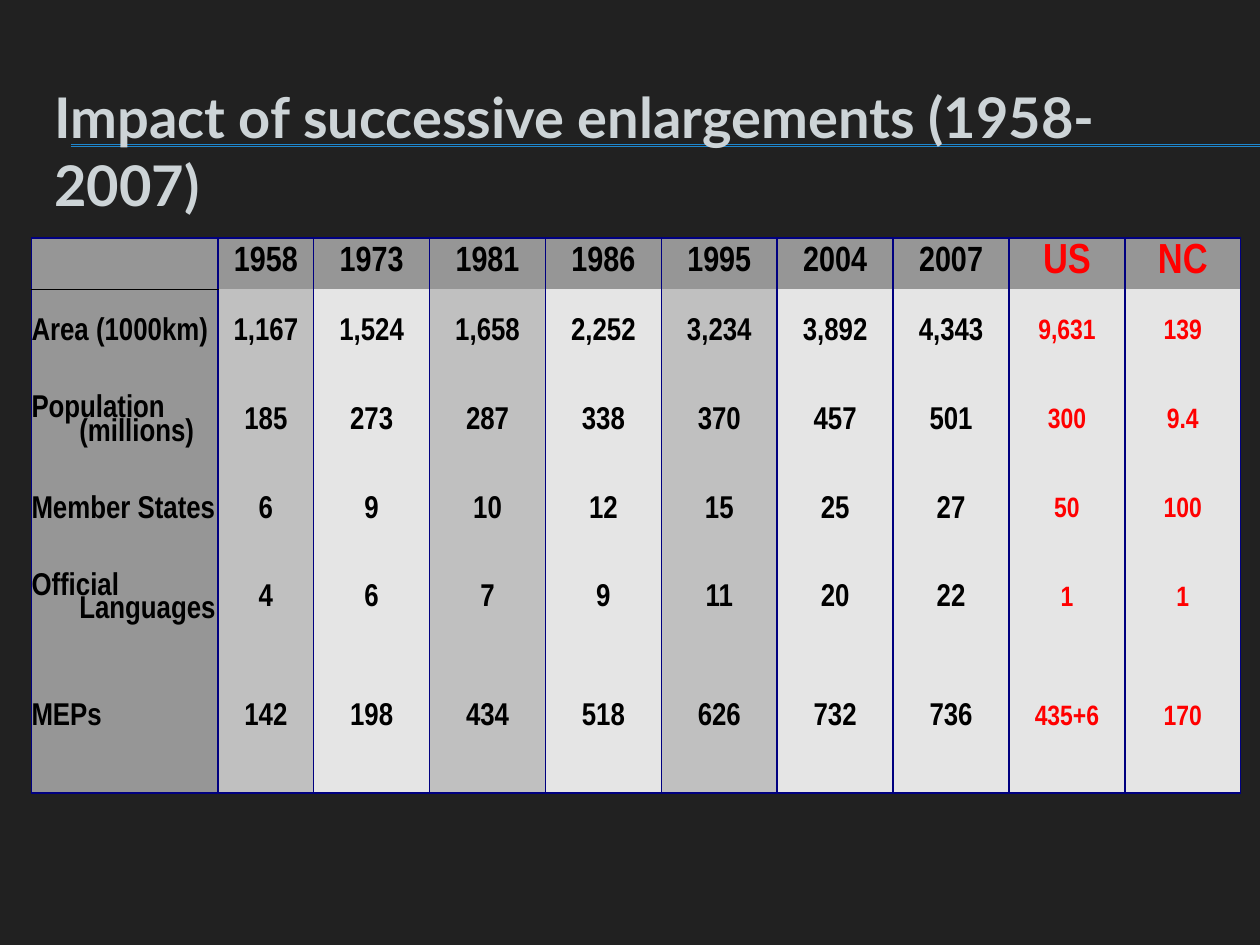
from dataclasses import dataclass

from lxml.etree import SubElement
from pptx import Presentation
from pptx.dml.color import RGBColor
from pptx.enum.shapes import MSO_CONNECTOR
from pptx.enum.text import MSO_ANCHOR, MSO_AUTO_SIZE, PP_ALIGN
from pptx.oxml.ns import qn
from pptx.util import Inches, Pt

W, H = Inches(10), Inches(7.5)
NAVY, BLACK, RED = "000080", "000000", "FF0000"
GREY, SILVER, PALE = "969696", "C0C0C0", "E5E5E5"
INDENT = Inches(0.38)
COL_SHARES = [0.148, 0.076] + [0.092] * 8
ROW_HEIGHTS = [0.4, 0.7, 0.71, 0.7, 0.71, 1.18]
SILVER_COLS = (1, 3, 5)
FIRST_RED_COL = 8

ROWS = [
    ["", "1958", "1973", "1981", "1986", "1995", "2004", "2007", "US", "NC"],
    ["Area (1000km)", "1,167", "1,524", "1,658", "2,252", "3,234", "3,892", "4,343", "9,631", "139"],
    ["Population (millions)", "185", "273", "287", "338", "370", "457", "501", "300", "9.4"],
    ["Member States", "6", "9", "10", "12", "15", "25", "27", "50", "100"],
    ["Official\vLanguages", "4", "6", "7", "9", "11", "20", "22", "1", "1"],
    ["MEPs", "142", "198", "434", "518", "626", "732", "736", "435+6", "170"],
]


@dataclass
class Rule:
    x: float
    y: float


RULES = [Rule(0.056, 0.153), Rule(0.056, 0.155)]


def rgb(value: str) -> RGBColor:
    return RGBColor.from_string(value)


def apply(obj, fmt: dict) -> None:
    for name, value in fmt.items():
        setattr(obj, name, value)


def set_font(font, color: str, **fmt) -> None:
    apply(font, fmt)
    font.color.rgb = rgb(color)


def draw_rule(s, rule: Rule) -> None:
    y = int(rule.y * H)
    sp = s.shapes.add_connector(MSO_CONNECTOR.STRAIGHT, int(rule.x * W), y, W, y)
    sp.line.color.rgb = rgb("1D86CD")
    sp.line.width = Pt(0.75)
    SubElement(sp.element.spPr, qn("a:effectLst"))


def set_borders(cell, colors: dict) -> None:
    tcPr = cell._tc.get_or_add_tcPr()
    for i, side in enumerate("LRTB"):
        color = colors.get(side)
        ln = tcPr.makeelement(qn(f"a:ln{side}"), {"w": str(Pt(1) if color else 0)})
        if color:
            fill = SubElement(ln, qn("a:solidFill"))
            SubElement(fill, qn("a:srgbClr"), val=color)
        else:
            SubElement(ln, qn("a:noFill"))
        tcPr.insert(i, ln)


def border_colors(row: int, col: int) -> dict:
    colors = {"L": NAVY, "R": NAVY}
    if row == 0:
        colors["T"] = NAVY
    if row == len(ROWS) - 1:
        colors["B"] = NAVY
    if col == 0 and row == 0:
        colors["B"] = BLACK
    if col == 0 and row == 1:
        colors["T"] = BLACK
    return colors


def fill_color(row: int, col: int) -> str:
    if row == 0 or col == 0:
        return GREY
    return SILVER if col in SILVER_COLS else PALE


def font_size(row: int, col: int) -> int:
    if col >= FIRST_RED_COL:
        return 16 if row else 24
    return 18 if row else 20


def draw_cell(cell, row: int, col: int, text: str) -> None:
    cell.vertical_anchor = MSO_ANCHOR.MIDDLE
    if col == 0 and row:
        apply(cell, {"margin_left": 0, "margin_right": 0})
    cell.fill.solid()
    cell.fill.fore_color.rgb = rgb(fill_color(row, col))
    set_borders(cell, border_colors(row, col))
    if not text:
        return
    cell.text = text
    p = cell.text_frame.paragraphs[0]
    apply(p, {"alignment": PP_ALIGN.CENTER if col else PP_ALIGN.LEFT, "line_spacing": 0.8})
    pPr = p._p.get_or_add_pPr()
    pPr.set("marL", str(INDENT))
    pPr.set("indent", str(-INDENT))
    color = RED if col >= FIRST_RED_COL else BLACK
    for r in p.runs:
        set_font(r.font, color, name="Arial Narrow", size=Pt(font_size(row, col)), bold=True)


def draw_table(s) -> None:
    widths = [int(share * W) for share in COL_SHARES]
    heights = [Inches(h) for h in ROW_HEIGHTS]
    table = s.shapes.add_table(len(ROWS), len(widths), int(0.025 * W), int(0.252 * H),
                               sum(widths), sum(heights)).table
    apply(table, {"first_row": False, "horz_banding": False})
    for column, width in zip(table.columns, widths):
        column.width = width
    for row, height in zip(table.rows, heights):
        row.height = height
    for i, values in enumerate(ROWS):
        for j, text in enumerate(values):
            draw_cell(table.cell(i, j), i, j, text)


def draw_title(s, text: str) -> None:
    sp = s.shapes.title
    apply(sp, {"left": int(0.033 * W), "top": int(0.081 * H),
               "width": int(0.95 * W), "height": int(0.085 * H)})
    tf = sp.text_frame
    apply(tf, {"text": text, "word_wrap": True, "auto_size": MSO_AUTO_SIZE.NONE,
               "vertical_anchor": MSO_ANCHOR.TOP})
    p = tf.paragraphs[0]
    p.alignment = PP_ALIGN.LEFT
    set_font(p.runs[0].font, "CDD4D7", name="Lato", size=Pt(32), bold=True)
    sp.element.getparent().append(sp.element)


def main() -> None:
    prs = Presentation()
    apply(prs, {"slide_width": W, "slide_height": H})
    s = prs.slides.add_slide(prs.slide_layouts[5])
    s.background.fill.solid()
    s.background.fill.fore_color.rgb = rgb("212121")
    for rule in RULES:
        draw_rule(s, rule)
    draw_table(s)
    draw_title(s, "Impact of successive enlargements (1958-2007)")
    prs.save("out.pptx")


if __name__ == "__main__":
    main()
